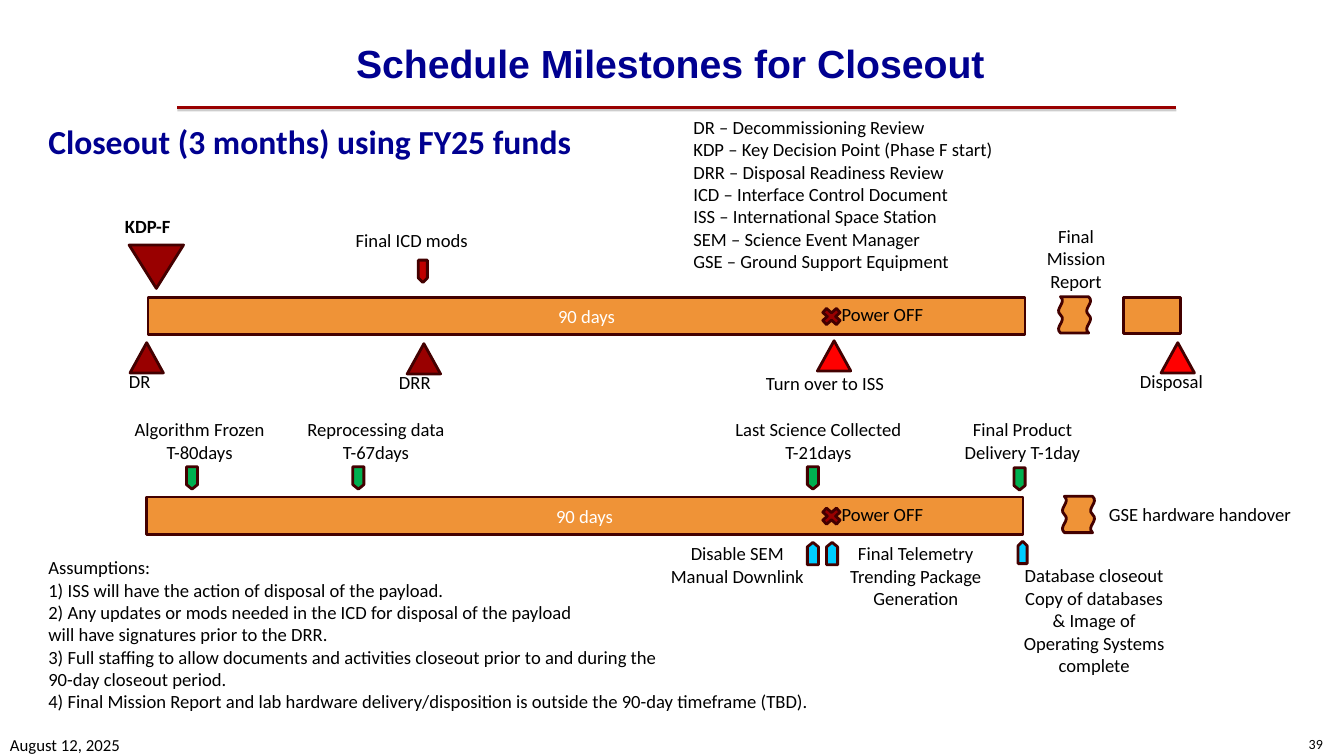
from pptx import Presentation
from pptx.dml.color import RGBColor
from pptx.enum.shapes import MSO_CONNECTOR, MSO_SHAPE
from pptx.enum.text import MSO_ANCHOR, PP_ALIGN
from pptx.oxml import parse_xml
from pptx.oxml.ns import nsdecls
from pptx.util import Pt

BLACK, WHITE, NAVY = "000000", "FFFFFF", "000090"
ORANGE, OUTLINE, DARK_RED, RED = "EF9337", "430000", "990000", "FF0000"
GREEN, CYAN, CRIMSON = "00B050", "00CCFF", "C00000"
LEFT, CENTER, RIGHT = PP_ALIGN.LEFT, PP_ALIGN.CENTER, PP_ALIGN.RIGHT
BODY_SIZE, LINE_HEIGHT, INSETS = 13.3, 16.2, 7.2
BAR_WIDTH, BAR_HEIGHT = 626.4, 26.6

LEGEND = """DR – Decommissioning Review
KDP – Key Decision Point (Phase F start)
DRR – Disposal Readiness Review
ICD – Interface Control Document
ISS – International Space Station
SEM – Science Event Manager
GSE – Ground Support Equipment"""

ASSUMPTIONS = """Assumptions:
1) ISS will have the action of disposal of the payload.
2) Any updates or mods needed in the ICD for disposal of the payload
will have signatures prior to the DRR.
3) Full staffing to allow documents and activities closeout prior to and during the
90-day closeout period.
4) Final Mission Report and lab hardware delivery/disposition is outside the 90-day timeframe (TBD)."""

LEFT_LABELS = [
    (LEGEND, 488.2, 79.2, 230.4),
    (ASSUMPTIONS, 27.4, 393.8, 562.3),
    ("DR", 85, 260.6, 30.2),
    ("DRR", 277.9, 261.4, 37.4),
    ("Turn over to ISS", 540, 262.1, 99.4),
    ("Disposal", 807.1, 260.6, 59.8),
    ("Final ICD mods", 247, 159.8, 95.8),
    ("Power OFF", 594, 213.1, 73.4),
    ("Power OFF", 594, 355.7, 73.4),
]

CENTERED_LABELS = [
    ("Final\nMission\nReport", 740.2, 157, 56.9),
    ("Algorithm Frozen\nT-80days", 88.6, 295.2, 108),
    ("Reprocessing data\nT-67days", 211.7, 295.2, 113.8),
    ("Last Science Collected\nT-21days", 517.7, 295.2, 133.9),
    ("Final Product\nDelivery T-1day", 681.1, 295.2, 98.6),
    ("GSE hardware handover", 784.1, 355.7, 146.2),
    ("Disable SEM\nManual Downlink", 471.6, 383.8, 110.2),
    ("Final Telemetry\nTrending Package\nGeneration", 599.8, 383.8, 108.7),
    ("Database closeout\nCopy of databases\n& Image of\nOperating Systems\ncomplete",
     723.6, 399.6, 115.9),
]

REVIEWS = [(92.9, 244.8, DARK_RED), (290.9, 245.5, DARK_RED),
           (583.9, 243.4, RED), (829.4, 244.8, RED)]

EVENTS = [
    (133.2, 333.4, 7.9, GREEN, 0),
    (252, 333.4, 7.9, GREEN, 0),
    (576.7, 333.4, 7.9, GREEN, 0),
    (724.3, 334.1, 7.9, GREEN, 0),
    (298.8, 185.8, 6.5, CRIMSON, 0),
    (576.7, 387.4, 7.9, CYAN, 180),
    (590.4, 387.4, 7.9, CYAN, 180),
    (727.2, 386.6, 6.5, CYAN, 180),
]


def color(value):
    """Return the colour for a hex string."""
    return RGBColor.from_string(value)


def write(frame, text, size=BODY_SIZE, ink=BLACK, bold=False, align=LEFT, font="Calibri"):
    """Fill a text frame, one paragraph per line, in a single style."""
    frame.text = text
    for paragraph in frame.paragraphs:
        paragraph.alignment = align
        paragraph.font.name = font
        paragraph.font.size = Pt(size)
        paragraph.font.bold = bold
        paragraph.font.color.rgb = color(ink)


def add_text(slide, text, left, top, width, height, middle=False, wrap=True, **style):
    """Add a text box of the given size."""
    box = slide.shapes.add_textbox(Pt(left), Pt(top), Pt(width), Pt(height))
    frame = box.text_frame
    frame.word_wrap = wrap
    frame.vertical_anchor = MSO_ANCHOR.MIDDLE if middle else MSO_ANCHOR.TOP
    write(frame, text, **style)


def add_label(slide, text, left, top, width, align=LEFT):
    """Add an unwrapped label whose height follows its number of lines."""
    height = INSETS + LINE_HEIGHT * len(text.split("\n"))
    add_text(slide, text, left, top, width, height, wrap=False, align=align)


def add_marker(slide, kind, left, top, width, height, fill, rotation=0):
    """Add a filled preset shape with the dark outline."""
    marker = slide.shapes.add_shape(kind, Pt(left), Pt(top), Pt(width), Pt(height))
    marker.shadow.inherit = False
    marker.rotation = rotation
    marker.fill.solid()
    marker.fill.fore_color.rgb = color(fill)
    marker.line.color.rgb = color(OUTLINE)
    marker.line.width = Pt(2)
    return marker


def add_timeline(slide, left, top, wave_left):
    """Add a 90-day bar with its power-off cross and the break that follows."""
    bar = add_marker(slide, MSO_SHAPE.RECTANGLE, left, top, BAR_WIDTH, BAR_HEIGHT, ORANGE)
    bar.text_frame.vertical_anchor = MSO_ANCHOR.MIDDLE
    write(bar.text_frame, "90 days", ink=WHITE, align=CENTER)
    add_marker(slide, MSO_SHAPE.MATH_MULTIPLY, 584.6, top + 5.4, 18.7, 16.6, DARK_RED)
    add_marker(slide, MSO_SHAPE.DOUBLE_WAVE, wave_left, top + 1, 25.9, 23, ORANGE, 270)


def add_title_rule(slide):
    """Add the red rule under the title with its soft grey shadow."""
    rule = slide.shapes.add_connector(
        MSO_CONNECTOR.STRAIGHT, Pt(126.7), Pt(77), Pt(840.2), Pt(77))
    rule.line.color.rgb = color(DARK_RED)
    rule.line.width = Pt(2)
    rule._element.spPr.append(parse_xml(
        f'<a:effectLst {nsdecls("a")}>'
        f'<a:outerShdw blurRad="0" dist="{Pt(1.6)}" dir="5400000" rotWithShape="0">'
        '<a:srgbClr val="808080"><a:alpha val="38000"/></a:srgbClr>'
        '</a:outerShdw></a:effectLst>'))


def main():
    """Build the closeout schedule slide."""
    deck = Presentation()
    deck.slide_width, deck.slide_height = Pt(960), Pt(540)
    slide = deck.slides.add_slide(deck.slide_layouts[6])

    add_title_rule(slide)
    add_text(slide, "Schedule Milestones for Closeout", 216, 15.8, 525.6, 58.3,
             middle=True, size=28, ink=NAVY, bold=True, align=CENTER, font="Arial")
    add_text(slide, "Closeout (3 months) using FY25 funds", 27.4, 82.8, 766, 36,
             size=24, ink=NAVY, bold=True)
    add_text(slide, "August 12, 2025", 0, 522.7, 224, 18, middle=True, size=12)
    add_text(slide, "39", 728, 522, 224, 18, middle=True, size=10, align=RIGHT)

    add_timeline(slide, 105.8, 212.4, 754.6)
    add_timeline(slide, 104.4, 355, 757.4)
    add_marker(slide, MSO_SHAPE.RECTANGLE, 802.8, 212.4, 40.3, 25.9, ORANGE)

    add_marker(slide, MSO_SHAPE.ISOSCELES_TRIANGLE, 92.2, 175, 38.9, 31, DARK_RED, 180)
    add_text(slide, "KDP-F", 82.1, 149.8, 68.4, 23.8, bold=True)
    for left, top, fill in REVIEWS:
        add_marker(slide, MSO_SHAPE.ISOSCELES_TRIANGLE, left, top, 23.8, 21.6, fill)
    for left, top, width, fill, rotation in EVENTS:
        add_marker(slide, MSO_SHAPE.FLOWCHART_OFFPAGE_CONNECTOR,
                   left, top, width, 16, fill, rotation)

    for label in LEFT_LABELS:
        add_label(slide, *label)
    for label in CENTERED_LABELS:
        add_label(slide, *label, align=CENTER)

    deck.save("out.pptx")


if __name__ == "__main__":
    main()
